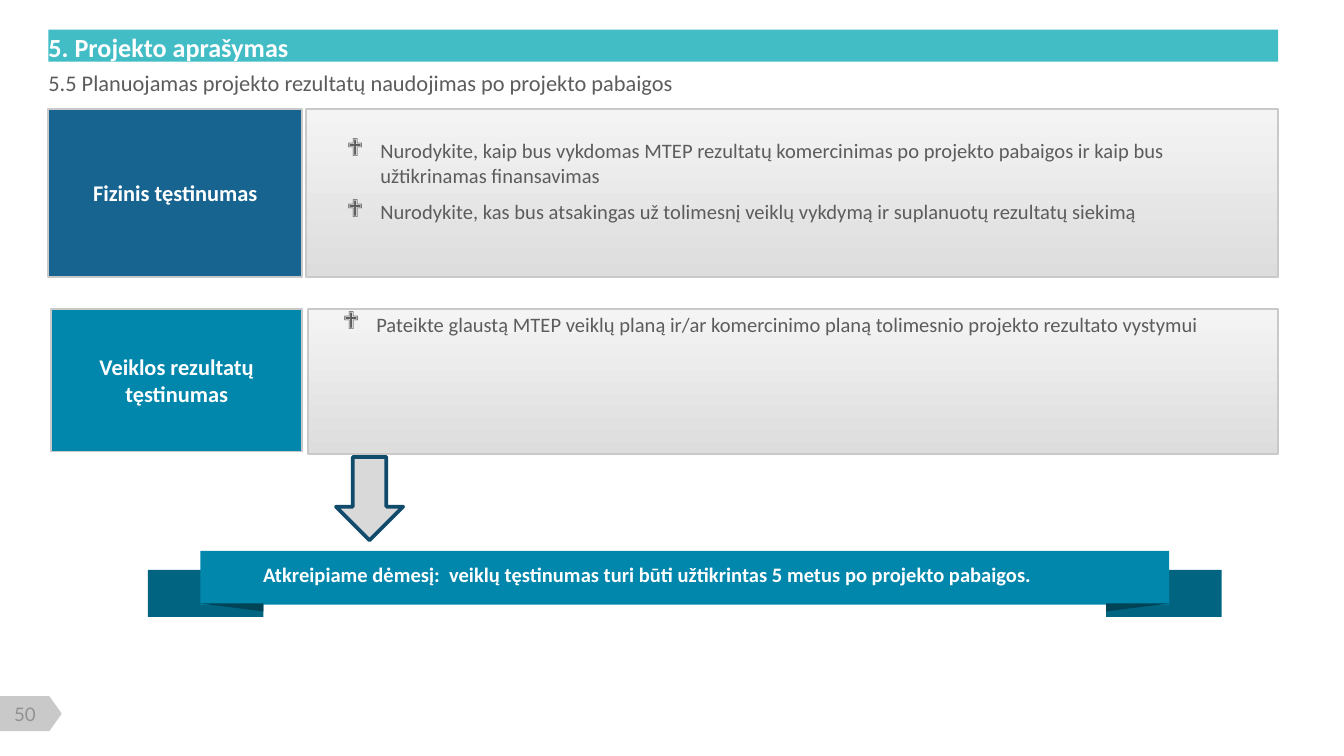
import pptx
import pptx.dml.color
import pptx.enum.shapes
import pptx.enum.text
import pptx.oxml.ns
import pptx.util
import lxml.etree

Inches = pptx.util.Inches
Pt = pptx.util.Pt
SHAPE = pptx.enum.shapes.MSO_SHAPE
ALIGN = pptx.enum.text.PP_ALIGN
ANCHOR = pptx.enum.text.MSO_ANCHOR

WHITE, GREY_TEXT, BORDER = "FFFFFF", "5C5C5C", "C9C9C9"
TEAL, DARK_TEAL, FOLD = "0187AC", "016581", "004356"


def rgb(value):
    return pptx.dml.color.RGBColor.from_string(value)


def add_bullet(paragraph):
    properties = paragraph._p.get_or_add_pPr()
    properties.set("marL", str(Inches(0.25)))
    properties.set("indent", str(Inches(-0.25)))
    for tag, key, value in (("a:buSzPct", "val", "120000"),
                            ("a:buFont", "typeface", "Wingdings"),
                            ("a:buChar", "char", "❖")):
        lxml.etree.SubElement(properties, pptx.oxml.ns.qn(tag)).set(key, value)


def write(frame, *lines, size=12, color=WHITE, bold=False, font="Calibri",
          align=ALIGN.LEFT, anchor=ANCHOR.MIDDLE, inset=0, after=0, bullet=False):
    frame.word_wrap = True
    frame.auto_size = pptx.enum.text.MSO_AUTO_SIZE.NONE
    frame.vertical_anchor = anchor
    frame.margin_left = frame.margin_right = Inches(inset)
    frame.margin_top = frame.margin_bottom = Inches(inset / 2)
    for index, line in enumerate(lines):
        paragraph = frame.add_paragraph() if index else frame.paragraphs[0]
        paragraph.text = line
        if bullet:
            add_bullet(paragraph)
        paragraph.alignment = align
        paragraph.space_before = Pt(0)
        paragraph.space_after = Pt(after)
        paragraph.font.size = Pt(size)
        paragraph.font.name = font
        paragraph.font.bold = bold
        paragraph.font.color.rgb = rgb(color)


def add_text(slide, box, *lines, **style):
    text = slide.shapes.add_textbox(*map(Inches, box))
    write(text.text_frame, *lines, **style)


def paint(shape, fill, line=None, line_width=1):
    shape.shadow.inherit = False
    if fill:
        shape.fill.solid()
        shape.fill.fore_color.rgb = rgb(fill)
    if line:
        shape.line.color.rgb = rgb(line)
        shape.line.width = Pt(line_width)
    else:
        shape.line.fill.background()


def add_block(slide, box, fill, line=None, kind=SHAPE.RECTANGLE, line_width=1):
    block = slide.shapes.add_shape(kind, *map(Inches, box))
    paint(block, fill, line, line_width)
    return block


def add_header(slide, left, top, width, height):
    bar = add_block(slide, (left, top, width, height), "42BDC6")
    slide.shapes._spTree.insert(2, bar._element)
    title = slide.shapes.title
    title.left, title.top = Inches(left), Inches(top + 0.01)
    title.width, title.height = Inches(5.99), Inches(height)
    write(title.text_frame, "5. Projekto aprašymas", size=14, bold=True)
    add_text(slide, (left, top + 0.3, width, 0.19),
             "5.5 Planuojamas projekto rezultatų naudojimas po projekto pabaigos",
             color=GREY_TEXT)


def add_section(slide, label_box, panel_box, label, fill, points, points_offset, after):
    label_block = add_block(slide, label_box, fill, BORDER)
    write(label_block.text_frame, label, bold=True, align=ALIGN.CENTER, inset=0.1)

    panel = add_block(slide, panel_box, None, BORDER)
    panel.fill.gradient()
    panel.fill.gradient_angle = 90
    for stop, color in zip(panel.fill.gradient_stops, ("DDDDDD", "F4F4F4")):
        stop.color.rgb = rgb(color)

    left, top, _, height = panel_box
    dx, dy = points_offset
    add_text(slide, (left + dx, top + dy, 6.5, height - dy - 0.1), *points, size=11,
             color=GREY_TEXT, anchor=ANCHOR.TOP, after=after, bullet=True)


def add_ribbon(slide, left, top, width, message):
    tail_width, tail_height, inset, band_height, fold_height = 0.86, 0.35, 0.39, 0.4, 0.06
    right = left + width
    for tail_left in (left, right - tail_width):
        add_block(slide, (tail_left, top + 0.14, tail_width, tail_height), DARK_TEAL)
    band_width = width - 2 * inset
    add_block(slide, (left + inset, top, band_width, band_height), TEAL)

    fold_top = top + band_height - 0.01
    for outer, inner in ((left + inset, left + tail_width),
                         (right - inset, right - tail_width)):
        builder = slide.shapes.build_freeform(Inches(outer), Inches(fold_top))
        builder.add_line_segments([(Inches(inner), Inches(fold_top)),
                                   (Inches(inner), Inches(fold_top + fold_height))])
        paint(builder.convert_to_shape(), FOLD)

    add_text(slide, (left + 0.76, top + 0.03, 6.83, 0.29), message,
             size=11, bold=True, anchor=ANCHOR.TOP, inset=0.1)


def add_page_number(slide, left, top, width, height, number):
    tab = add_block(slide, (left + (width - height) / 2, top - (width - height) / 2,
                            height, width), BORDER, kind=SHAPE.FLOWCHART_OFFPAGE_CONNECTOR)
    tab.rotation = 270
    add_text(slide, (left + 0.02, top + 0.05, 0.33, 0.17), number,
             size=10, font="Lato", color="929292", align=ALIGN.CENTER)


def main():
    presentation = pptx.Presentation()
    presentation.slide_width = Inches(10)
    presentation.slide_height = Inches(10) * 9 // 16
    slide = presentation.slides.add_slide(presentation.slide_layouts[5])

    add_page_number(slide, 0, 5.18, 0.46, 0.26, "50")
    add_header(slide, 0.36, 0.22, 9.15, 0.24)
    add_section(
        slide, (0.38, 2.3, 1.87, 1.06), (2.29, 2.3, 7.22, 1.08),
        "Veiklos rezultatų tęstinumas", TEAL,
        ["Pateikte glaustą MTEP veiklų planą ir/ar komercinimo planą tolimesnio "
         "projekto rezultato vystymui"], (0.26, 0.02), 12)
    add_section(
        slide, (0.36, 0.81, 1.89, 1.25), (2.28, 0.81, 7.23, 1.25),
        "Fizinis tęstinumas", "176490",
        ["Nurodykite, kaip bus vykdomas MTEP rezultatų komercinimas po projekto "
         "pabaigos ir kaip bus užtikrinamas finansavimas",
         "Nurodykite, kas bus atsakingas už tolimesnį veiklų vykdymą ir suplanuotų "
         "rezultatų siekimą"], (0.3, 0.22), 6)
    add_ribbon(slide, 1.1, 4.1, 7.99,
               "Atkreipiame dėmesį:  veiklų tęstinumas turi būti užtikrintas 5 metus "
               "po projekto pabaigos.")
    add_block(slide, (2.5, 3.4, 0.5, 0.62), "D9D9D9", "114B6C", SHAPE.DOWN_ARROW, 2)

    presentation.save("out.pptx")


if __name__ == "__main__":
    main()
